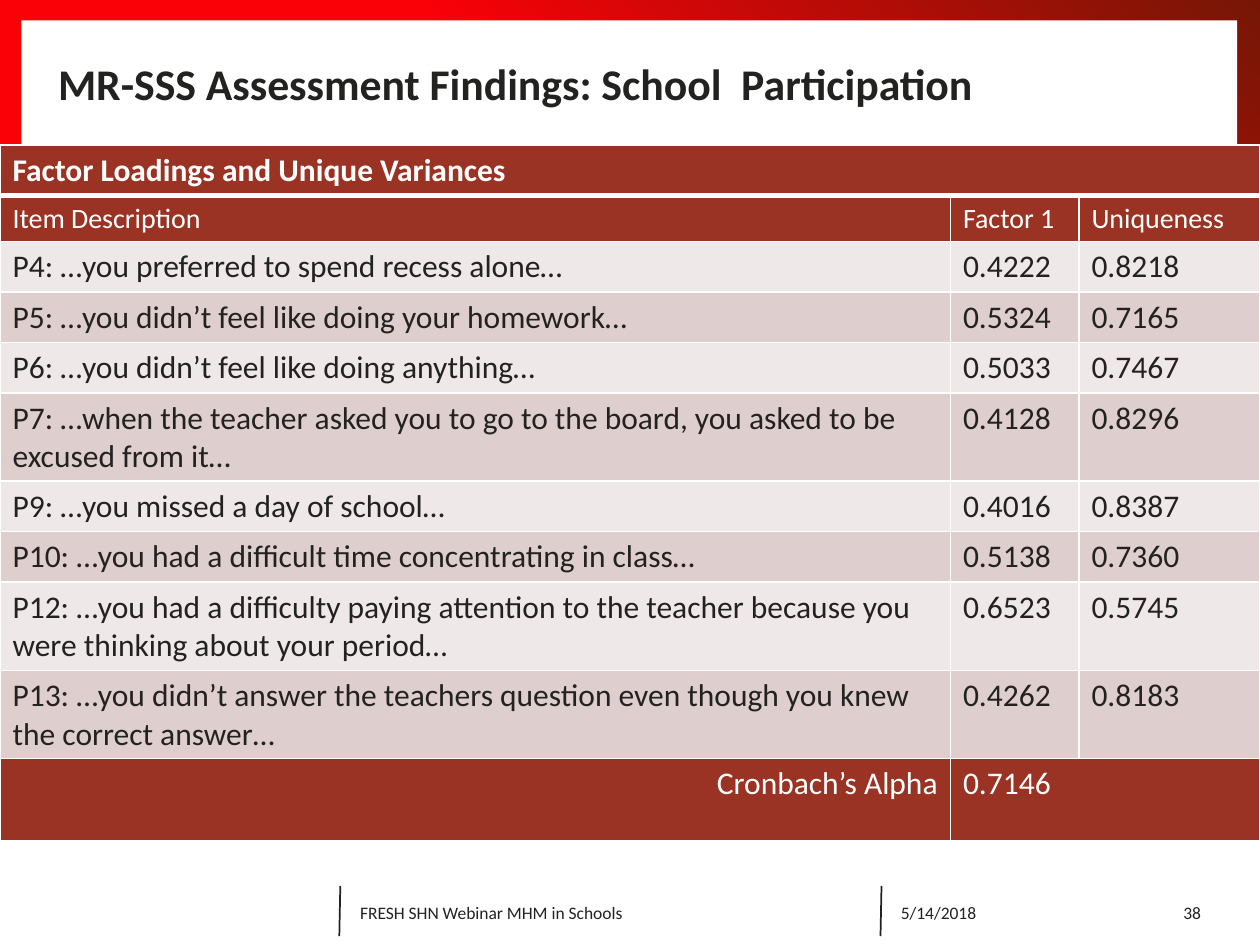
import pptx
import pptx.dml.color
import pptx.enum.shapes
import pptx.enum.text
import pptx.oxml
import pptx.oxml.ns
import pptx.util

Cm, Pt = pptx.util.Cm, pptx.util.Pt
RGB = pptx.dml.color.RGBColor
ALIGN = pptx.enum.text.PP_ALIGN
MIDDLE = pptx.enum.text.MSO_ANCHOR.MIDDLE
XMLNS = pptx.oxml.ns.nsdecls("a")

INK = RGB(0x22, 0x22, 0x21)
WHITE = RGB(0xFF, 0xFF, 0xFF)
RED = RGB(0xFA, 0x00, 0x07)
DARK_RED = RGB(0x76, 0x17, 0x06)
BRICK = RGB(0x9A, 0x33, 0x24)
BANDS = (RGB(0xEF, 0xE8, 0xE8), RGB(0xDE, 0xCE, 0xCD))

LOADINGS = [
    ("P4: …you preferred to spend recess alone…", "0.4222", "0.8218"),
    ("P5: …you didn’t feel like doing your homework…", "0.5324", "0.7165"),
    ("P6: …you didn’t feel like doing anything…", "0.5033", "0.7467"),
    ("P7: …when the teacher asked you to go to the board, you asked to be "
     "excused from it…", "0.4128", "0.8296"),
    ("P9: …you missed a day of school…", "0.4016", "0.8387"),
    ("P10: …you had a difficult time concentrating in class…", "0.5138", "0.7360"),
    ("P12: …you had a difficulty paying attention to the teacher because you "
     "were thinking about your period…", "0.6523", "0.5745"),
    ("P13: …you didn’t answer the teachers question even though you knew "
     "the correct answer…", "0.4262", "0.8183"),
]
COLUMN_WIDTHS = (19.16, 2.59, 3.65)
ROW_HEIGHTS = (0.97, 0.89, 0.97, 0.97, 0.97, 1.7, 0.97, 0.97, 1.7, 1.7, 1.65)


class SlideBuilder:
    font = "Calibri"

    def __init__(self, slide):
        self.s = slide

    def text(self, tf, text, size, color=INK, bold=False, align=ALIGN.LEFT):
        p = tf.paragraphs[0]
        p.alignment = align
        r = p.add_run()
        r.text = text
        r.font.name = self.font
        r.font.size = Pt(size)
        r.font.bold = bold
        r.font.color.rgb = color

    def title(self, text, x, y, w, h):
        sp = self.s.shapes.title
        sp.left, sp.top, sp.width, sp.height = Cm(x), Cm(y), Cm(w), Cm(h)
        sp.element.getparent().append(sp.element)  # in front of the header panel
        tf = sp.text_frame
        tf.auto_size = pptx.enum.text.MSO_AUTO_SIZE.NONE
        tf.vertical_anchor = MIDDLE
        tf.margin_left = tf.margin_right = tf.margin_top = tf.margin_bottom = 0
        self.text(tf, text, 25, bold=True)

    def rect(self, x, y, w, h):
        sp = self.s.shapes.add_shape(pptx.enum.shapes.MSO_SHAPE.RECTANGLE,
                                     Cm(x), Cm(y), Cm(w), Cm(h))
        sp.shadow.inherit = False
        sp.line.fill.background()
        return sp

    def panel(self, x, y, w, h, color):
        fill = self.rect(x, y, w, h).fill
        fill.solid()
        fill.fore_color.rgb = color

    def gradient_band(self, x, y, w, h, stops, angle):
        fill = self.rect(x, y, w, h).fill
        fill.gradient()
        fill.gradient_angle = angle
        for stop, (position, color) in zip(fill.gradient_stops, stops):
            stop.position = position
            stop.color.rgb = color

    def line(self, x1, y1, x2, y2):
        sp = self.s.shapes.add_connector(pptx.enum.shapes.MSO_CONNECTOR.STRAIGHT,
                                         Cm(x1), Cm(y1), Cm(x2), Cm(y2))
        sp.line.color.rgb = INK
        sp.line.width = Pt(1)
        sp.element.spPr.append(pptx.oxml.parse_xml(f"<a:effectLst {XMLNS}/>"))

    def footer(self, text, x, w, align=ALIGN.LEFT):
        tf = self.s.shapes.add_textbox(Cm(x), Cm(17.88), Cm(w), Cm(1.02)).text_frame
        tf.word_wrap = True
        tf.vertical_anchor = MIDDLE
        self.text(tf, text, 10, align=align)

    def table(self, x, y, widths, heights):
        shape = self.s.shapes.add_table(len(heights), len(widths), Cm(x), Cm(y),
                                        Cm(sum(widths)), Cm(sum(heights)))
        tbl = shape.table
        for column, width in zip(tbl.columns, widths):
            column.width = Cm(width)
        for row, height in zip(tbl.rows, heights):
            row.height = Cm(height)
        return tbl

    def cell(self, cell, fill, top=1, bottom=1):
        """Fill a cell and give it white borders; top and bottom are in points."""
        tc_pr = cell._tc.get_or_add_tcPr()
        for side, width in zip("LRTB", (1, 1, top, bottom)):
            tc_pr.append(pptx.oxml.parse_xml(
                f'<a:ln{side} {XMLNS} w="{Pt(width)}"><a:solidFill>'
                f'<a:srgbClr val="{WHITE}"/></a:solidFill></a:ln{side}>'))
        cell.fill.solid()
        cell.fill.fore_color.rgb = fill


def add_loadings_table(b):
    rows = [("Factor Loadings and Unique Variances", "", ""),
            ("Item Description", "Factor 1", "Uniqueness"),
            *LOADINGS,
            ("Cronbach’s Alpha", "0.7146", "")]
    last = len(rows) - 1
    tbl = b.table(0, 2.92, COLUMN_WIDTHS, ROW_HEIGHTS)
    tbl.cell(0, 0).merge(tbl.cell(0, 2))
    tbl.cell(last, 1).merge(tbl.cell(last, 2))
    for i, row in enumerate(rows):
        heading = i in (0, 1, last)
        for j, text in enumerate(row):
            cell = tbl.cell(i, j)
            b.cell(cell, BRICK if heading else BANDS[i % 2],
                   top=3 if i == 1 else 1, bottom=3 if i == 0 else 1)
            if text:
                b.text(cell.text_frame, text, 16 if i == 1 else 18,
                       WHITE if heading else INK, bold=i == 0,
                       align=ALIGN.RIGHT if (i, j) == (last, 0) else ALIGN.LEFT)


def main():
    prs = pptx.Presentation()
    prs.slide_width, prs.slide_height = Cm(25.4), Cm(19.05)
    b = SlideBuilder(prs.slides.add_slide(prs.slide_layouts[5]))

    b.gradient_band(0, 0, 25.4, 3.25, [(0.4, RED), (1, DARK_RED)], 45)
    b.panel(0.43, 0.41, 24.51, 3, WHITE)
    for x in (6.86, 17.77):
        b.line(x, 17.86, x - 0.02, 18.87)
    b.title("MR-SSS Assessment Findings: School  Participation", 1.17, 0.51, 23.01, 2.34)
    b.footer("5/14/2018", 17.91, 4.39)
    b.footer("FRESH SHN Webinar MHM in Schools", 7.01, 10.62)
    b.footer("38", 22.3, 2.16, ALIGN.RIGHT)
    add_loadings_table(b)

    prs.save("out.pptx")


if __name__ == "__main__":
    main()
